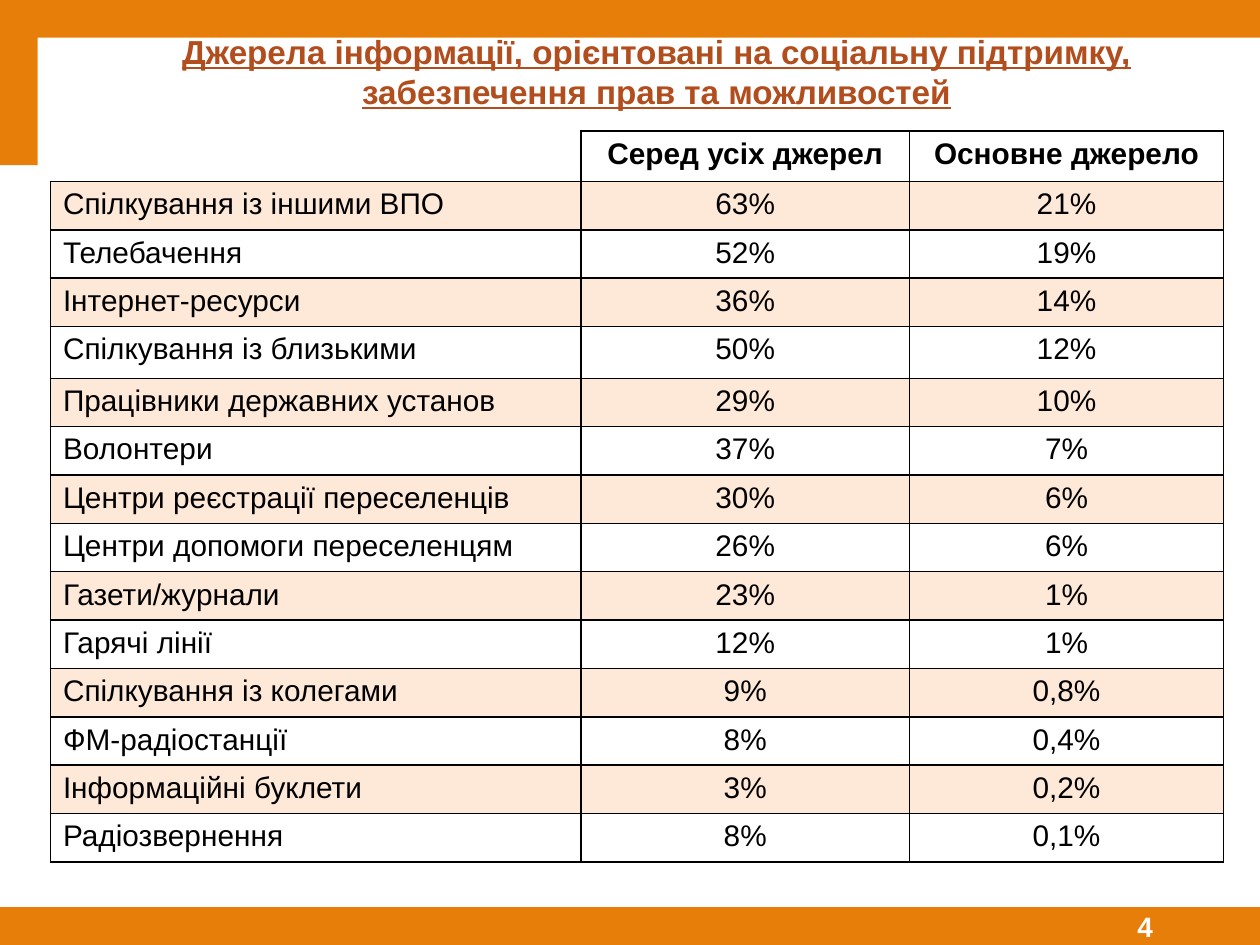
import pptx
import pptx.util
import pptx.dml.color
import pptx.enum.shapes
import pptx.enum.text
import pptx.oxml.ns
import lxml.etree

TITLE = "Джерела інформації, орієнтовані на соціальну підтримку, забезпечення прав та можливостей"
PAGE = "4"
HEAD = ("", "Серед усіх джерел", "Основне джерело")
ROWS = [
    ("Спілкування із іншими ВПО", "63%", "21%"),
    ("Телебачення", "52%", "19%"),
    ("Інтернет-ресурси", "36%", "14%"),
    ("Спілкування із близькими", "50%", "12%"),
    ("Працівники державних установ", "29%", "10%"),
    ("Волонтери", "37%", "7%"),
    ("Центри реєстрації переселенців", "30%", "6%"),
    ("Центри допомоги переселенцям", "26%", "6%"),
    ("Газети/журнали", "23%", "1%"),
    ("Гарячі лінії", "12%", "1%"),
    ("Спілкування із колегами", "9%", "0,8%"),
    ("ФМ-радіостанції", "8%", "0,4%"),
    ("Інформаційні буклети", "3%", "0,2%"),
    ("Радіозвернення", "8%", "0,1%"),
]
BARS = [
    (0, 7.2, 1.83, 0.3),
    (1.71, 7.2, 6.56, 0.3),
    (0, 0, 10, 0.3),
    (0, 0.29, 0.3, 1.02),
]
COLS = (4.21, 2.61, 2.49)
GRID = (0.4, 1.04, sum(COLS), 5.77)
TALL, TALL_H = 4, 0.41
THEME = {
    "font": "Arial",
    "bar": "E87E0A", "title": "B24D1D", "ink": "000000",
    "band": "FA8D3D", "alpha": 20, "page": "FFFFFF",
    "title_pt": 19, "cell_pt": 17, "page_pt": 16, "line_pt": 1,
}
PLAIN = "{2D5ABB26-0587-4C30-8999-92F81FD0307C}"

Inches = pptx.util.Inches
Align = pptx.enum.text.PP_ALIGN
Anchor = pptx.enum.text.MSO_ANCHOR
qn = pptx.oxml.ns.qn


def rgb(name):
    return pptx.dml.color.RGBColor.from_string(THEME[name])


def write(frame, text, size="cell_pt", color="ink", bold=False, line=False, align=Align.LEFT):
    para = frame.paragraphs[0]
    para.alignment = align
    run = para.add_run()
    run.text = text
    font = run.font
    font.name = THEME["font"]
    font.size = pptx.util.Pt(THEME[size])
    font.bold = bold
    font.underline = line
    font.color.rgb = rgb(color)


def add_bar(slide, box):
    bar = slide.shapes.add_shape(pptx.enum.shapes.MSO_SHAPE.RECTANGLE, *map(Inches, box))
    bar.shadow.inherit = False
    bar.fill.solid()
    bar.fill.fore_color.rgb = rgb("bar")
    bar.line.fill.background()
    return bar


def edge(cell, sides):
    props = cell._tc.get_or_add_tcPr()
    for side in sides:
        line = lxml.etree.SubElement(props, qn("a:ln" + side), w=str(pptx.util.Pt(THEME["line_pt"])))
        fill = lxml.etree.SubElement(line, qn("a:solidFill"))
        lxml.etree.SubElement(fill, qn("a:srgbClr"), val=THEME["ink"])


def shade(cell, band):
    if not band:
        cell.fill.background()
        return
    cell.fill.solid()
    cell.fill.fore_color.rgb = rgb("band")
    color = cell._tc.tcPr.find(".//" + qn("a:srgbClr") + "[@val='" + THEME["band"] + "']")
    lxml.etree.SubElement(color, qn("a:alpha"), val=str(THEME["alpha"] * 1000))


def add_grid(slide):
    data = [HEAD] + ROWS
    table = slide.shapes.add_table(len(data), len(COLS), *map(Inches, GRID)).table
    table._tbl.tblPr.find(qn("a:tableStyleId")).text = PLAIN
    for col, width in zip(table.columns, COLS):
        col.width = Inches(width)
    height = (GRID[3] - TALL_H) / (len(data) - 1)
    for r, texts in enumerate(data):
        table.rows[r].height = Inches(TALL_H if r == TALL else height)
        for c, text in enumerate(texts):
            cell = table.cell(r, c)
            edge(cell, "LRTB" if r or c else "RB")
            shade(cell, r % 2)
            if text:
                write(cell.text_frame, text, bold=r == 0, align=Align.CENTER if c else Align.LEFT)


def main():
    deck = pptx.Presentation()
    deck.slide_width, deck.slide_height = Inches(10), Inches(7.5)
    slide = deck.slides.add_slide(deck.slide_layouts[6])
    for box in BARS:
        add_bar(slide, box)

    frame = slide.shapes.add_textbox(*map(Inches, (0.3, 0.3, 9.7, 0.53))).text_frame
    frame.word_wrap = True
    frame.vertical_anchor = Anchor.MIDDLE
    frame.margin_left = Inches(0.22)
    write(frame, TITLE, size="title_pt", color="title", bold=True, line=True, align=Align.CENTER)

    add_grid(slide)

    frame = add_bar(slide, (8.18, 7.2, 1.82, 0.3)).text_frame
    frame.vertical_anchor = Anchor.MIDDLE
    frame.margin_right = Inches(0.85)
    write(frame, PAGE, size="page_pt", color="page", bold=True, align=Align.RIGHT)
    deck.save("out.pptx")


if __name__ == "__main__":
    main()
